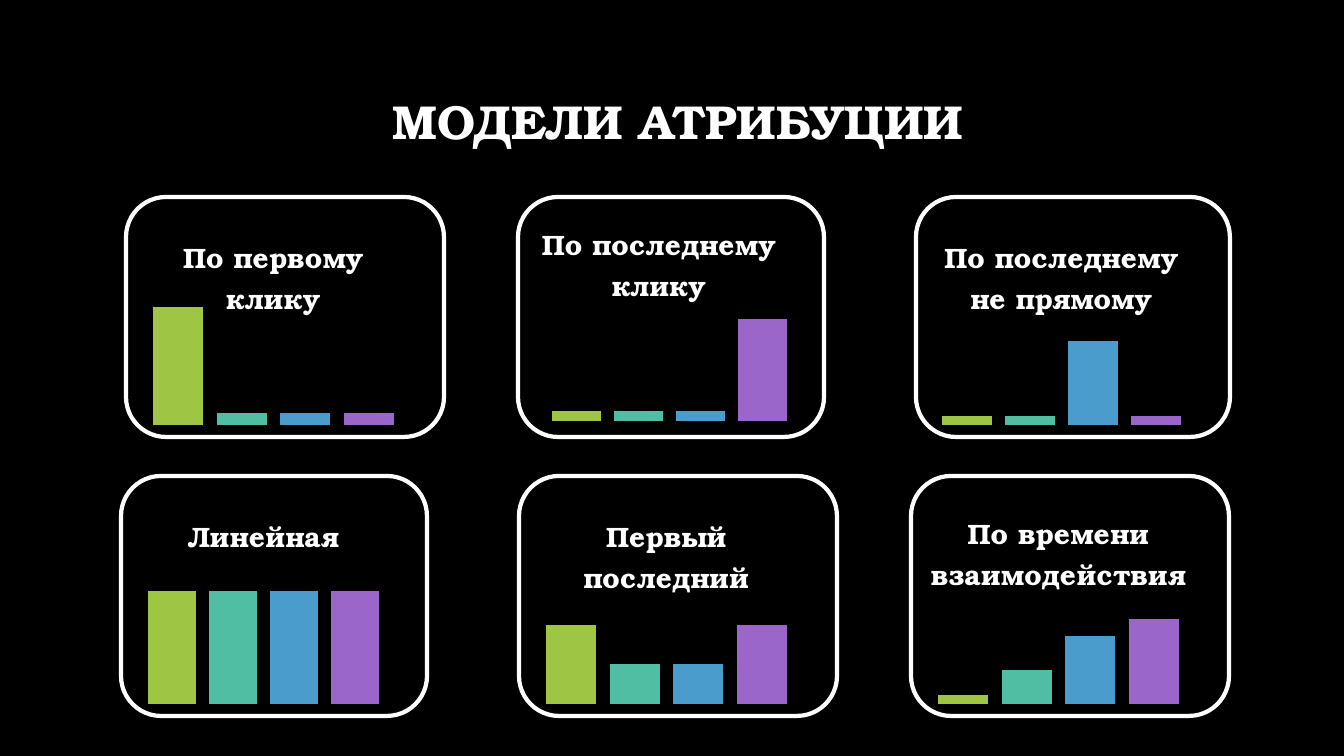
import pptx
import pptx.chart.data
import pptx.dml.color
import pptx.enum.chart
import pptx.enum.shapes
import pptx.enum.text
import pptx.oxml
import pptx.oxml.ns
import pptx.util
from dataclasses import dataclass

PX = 914400 / 100.8


@dataclass(frozen=True)
class Theme:
    back: str = "000000"
    ink: str = "FFFFFF"
    bars: tuple = ("9EC544", "50BEA3", "4A9CCC", "9A66CA")
    font: str = "TeX Gyre Bonum"
    head: int = 34
    label: int = 20
    small: int = 10
    line: int = 3


THEME = Theme()


@dataclass(frozen=True)
class Card:
    """One model; pads are the left, right and lower gaps around the plot."""
    name: tuple
    vals: tuple
    chart: tuple
    frame: tuple
    rise: int
    pads: tuple = (7, 7, 5)


CARDS = (
    Card(("По первому клику",), (100, 10, 10, 10),
         (91, 218, 365, 212), (126, 197, 318, 240), 118),
    Card(("По последнему клику",), (10, 10, 10, 100),
         (473, 205, 372, 233), (518, 197, 306, 240), 102, (26, 5, 17)),
    Card(("По последнему не прямому",), (10, 10, 100, 10),
         (881, 218, 361, 212), (916, 197, 314, 240), 84),
    Card(("Линейная",), (100, 100, 100, 100),
         (88, 497, 351, 212), (121, 476, 306, 240), 113),
    Card(("Первый последний",), (100, 50, 50, 100),
         (484, 497, 365, 212), (519, 476, 318, 240), 79),
    Card(("По времени", "взаимодействия"), (10, 40, 80, 100),
         (876, 497, 365, 212), (911, 476, 318, 240), 85),
)


def emu(*nums):
    return [round(num * PX) for num in nums]


def rgb(code):
    return pptx.dml.color.RGBColor.from_string(code)


def style(font, size, bold=False):
    font.name = THEME.font
    font.size = pptx.util.Pt(size)
    font.bold = bold
    font.color.rgb = rgb(THEME.ink)


def add_head(slide, text, box):
    frame = slide.shapes.add_textbox(*emu(*box)).text_frame
    frame.word_wrap = True
    frame.vertical_anchor = pptx.enum.text.MSO_ANCHOR.MIDDLE
    para = frame.paragraphs[0]
    para.text = text
    para.alignment = pptx.enum.text.PP_ALIGN.CENTER
    para.line_spacing = 0.9
    style(para.font, THEME.head, True)


def set_plot(chart, card):
    """Fix the inner plot area as shares of the chart's size."""
    wide, high = card.chart[2:]
    left, right, foot = card.pads
    parts = {"x": left / wide, "y": (high - foot - card.rise) / high,
             "w": (wide - left - right) / wide, "h": card.rise / high}
    marks = '<c:layoutTarget val="inner"/><c:xMode val="edge"/><c:yMode val="edge"/>'
    marks += "".join(f'<c:{key} val="{val:.4f}"/>' for key, val in parts.items())
    space = pptx.oxml.ns.nsdecls("c")
    area = chart._chartSpace.chart.plotArea
    for old in area.findall(pptx.oxml.ns.qn("c:layout")):
        area.remove(old)
    area.insert(0, pptx.oxml.parse_xml(
        f"<c:layout {space}><c:manualLayout>{marks}</c:manualLayout></c:layout>"))


def add_name(chart, lines):
    frame = chart.chart_title.text_frame
    frame.text = "\n".join(lines)
    for para in frame.paragraphs:
        style(para.font, THEME.label, True)
    chart.chart_title.include_in_layout = False


def add_bars(shapes, card):
    data = pptx.chart.data.CategoryChartData()
    data.categories = ["1"]
    for num, val in enumerate(card.vals, 1):
        data.add_series(f"Series {num}", [val])
    kind = pptx.enum.chart.XL_CHART_TYPE.COLUMN_CLUSTERED
    chart = shapes.add_chart(kind, *emu(*card.chart), data).chart
    style(chart.font, THEME.small)
    chart.has_legend = False
    add_name(chart, card.name)
    axis = chart.value_axis
    axis.minimum_scale, axis.maximum_scale = 0, 100
    axis.has_major_gridlines = False
    axis.visible = chart.category_axis.visible = False
    plot = chart.plots[0]
    plot.gap_width, plot.overlap = 219, -27
    plot.vary_by_categories = False
    for bar, code in zip(plot.series, THEME.bars):
        bar.format.fill.solid()
        bar.format.fill.fore_color.rgb = rgb(code)
    set_plot(chart, card)


def add_frame(shapes, box):
    kind = pptx.enum.shapes.MSO_SHAPE.ROUNDED_RECTANGLE
    frame = shapes.add_shape(kind, *emu(*box))
    frame.shadow.inherit = False
    frame.fill.background()
    frame.line.color.rgb = rgb(THEME.ink)
    frame.line.width = pptx.util.Pt(THEME.line)


def add_card(slide, card):
    shapes = slide.shapes.add_group_shape().shapes
    add_bars(shapes, card)
    add_frame(shapes, card.frame)


def main():
    deck = pptx.Presentation()
    deck.slide_width, deck.slide_height = emu(1344, 756)
    slide = deck.slides.add_slide(deck.slide_layouts[6])
    fill = slide.background.fill
    fill.solid()
    fill.fore_color.rgb = rgb(THEME.back)
    add_head(slide, "МОДЕЛИ АТРИБУЦИИ", (101, 68, 1154, 113))
    for card in CARDS:
        add_card(slide, card)
    deck.save("out.pptx")


if __name__ == "__main__":
    main()
